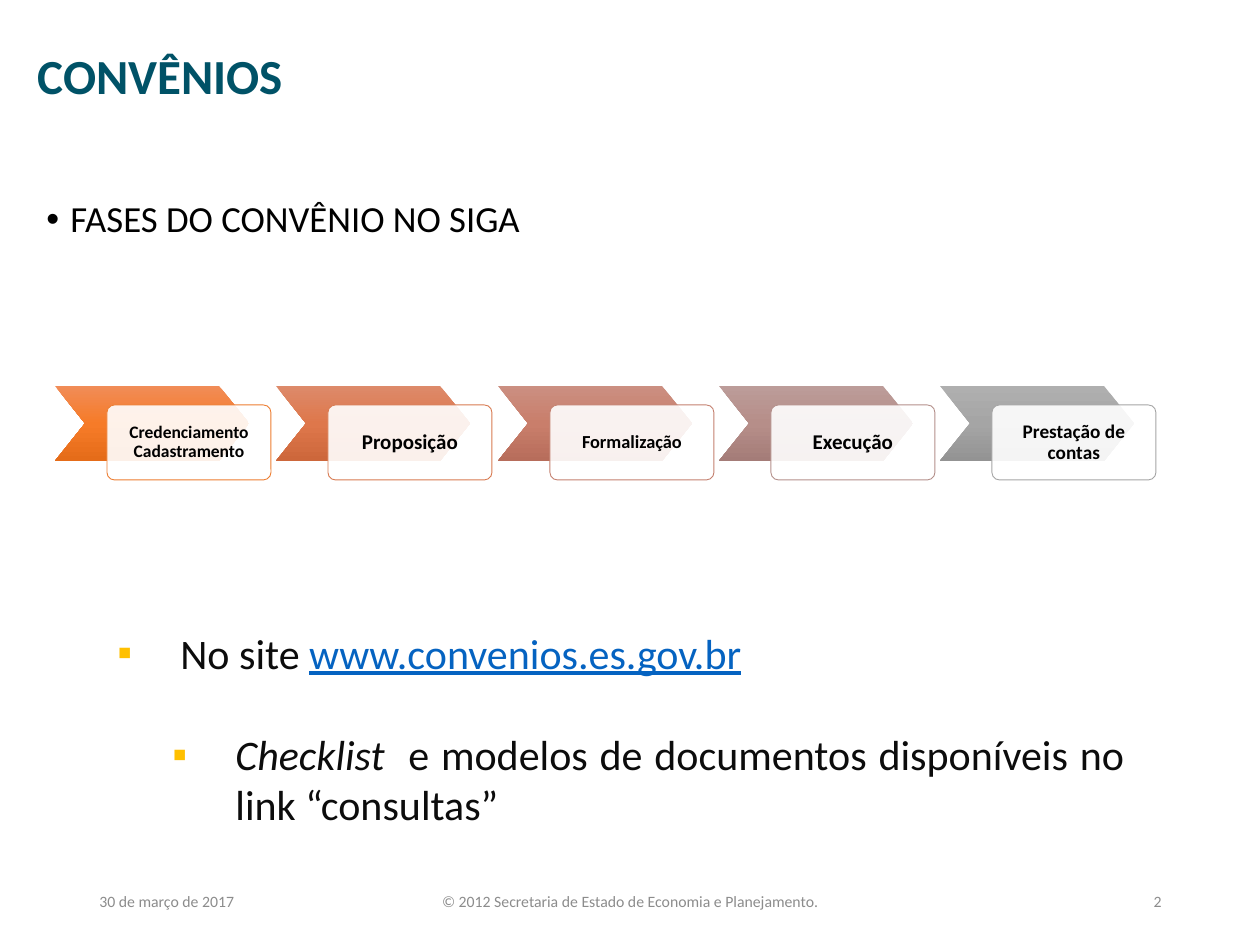
from dataclasses import dataclass

from lxml.etree import SubElement
from pptx import Presentation
from pptx.dml.color import RGBColor
from pptx.enum.shapes import MSO_SHAPE as Shape
from pptx.enum.text import MSO_ANCHOR as Anchor, MSO_AUTO_SIZE as AutoSize, PP_ALIGN as Align
from pptx.oxml.ns import qn
from pptx.util import Emu, Pt

PX = 914400 / 126
FONT = "Calibri"
COLORS = {
    "title": "005267",
    "black": "000000",
    "white": "FFFFFF",
    "text": "0C0C0C",
    "link": "0563C1",
    "bullet": "FFC000",
    "footer": "8C8C8C",
}


@dataclass
class Phase:
    label: str
    size: float
    gradient: tuple[str, str, str]
    outline: str


@dataclass
class Footer:
    text: str
    left: int
    width: int
    align: Align


PHASES = [
    Phase("Credenciamento Cadastramento", 10, ("F18C57", "F67B28", "E56C19"), "ED7D31"),
    Phase("Proposição", 12, ("DD8A6A", "DE774B", "CD673B"), "D87A51"),
    Phase("Formalização", 10.5, ("CB8F81", "C97E6B", "B76D5B"), "C48170"),
    Phase("Execução", 12, ("BC9C99", "B68E89", "A47C78"), "B4908B"),
    Phase("Prestação de contas", 11, ("AFAFAF", "A5A5A5", "939393"), "A5A5A5"),
]
FOOTERS = [
    Footer("30 de março de 2017", 87, 284, Align.LEFT),
    Footer("© 2012 Secretaria de Estado de Economia e Planejamento.", 417, 426, Align.CENTER),
    Footer("2", 890, 284, Align.RIGHT),
]
FIRST_LEFT, LAST_LEFT = 55, 940
CHEVRON_TOP, CHEVRON_WIDTH = 386, 194
CARD_SHIFT_X, CARD_SHIFT_Y, CARD_WIDTH = 52, 19, 164
PHASE_HEIGHT, CARD_INSET = 75, 12


def px(value: int) -> Emu:
    return Emu(round(value * PX))


def box(left: int, top: int, width: int, height: int) -> tuple[Emu, Emu, Emu, Emu]:
    return px(left), px(top), px(width), px(height)


def style_run(run, size: float, color: str, **flags: bool) -> None:
    font = run.font
    font.name, font.size = FONT, Pt(size)
    font.color.rgb = RGBColor.from_string(color)
    for name, value in flags.items():
        setattr(font, name, value)


def add_run(paragraph, text: str, size: float, color: str, **flags: bool) -> None:
    run = paragraph.add_run()
    run.text = text
    style_run(run, size, color, **flags)


def add_text_frame(slide, left: int, top: int, width: int, height: int):
    frame = slide.shapes.add_textbox(*box(left, top, width, height)).text_frame
    frame.word_wrap = True
    return frame


def set_bullet(paragraph, char: str, margin: int, hanging: int, color: str) -> None:
    properties = paragraph._p.get_or_add_pPr()
    properties.set("marL", str(px(margin)))
    properties.set("indent", str(-px(hanging)))
    SubElement(SubElement(properties, qn("a:buClr")), qn("a:srgbClr"), val=color)
    SubElement(properties, qn("a:buFont"), typeface="Arial")
    SubElement(properties, qn("a:buChar"), char=char)


def set_gradient(shape, colors: tuple[str, str, str]) -> None:
    """Fill from top to bottom with evenly spaced colours."""
    shape.fill.gradient()
    shape.fill.gradient_angle = 270
    stops = shape._element.spPr.find(".//" + qn("a:gsLst"))
    stops.clear()
    for index, color in enumerate(colors):
        position = index * 100000 // (len(colors) - 1)
        stop = SubElement(stops, qn("a:gs"), pos=str(position))
        SubElement(stop, qn("a:srgbClr"), val=color)


def add_phase(slide, phase: Phase, left: int) -> None:
    chevron = slide.shapes.add_shape(
        Shape.CHEVRON, *box(left, CHEVRON_TOP, CHEVRON_WIDTH, PHASE_HEIGHT))
    chevron.adjustments[0] = 0.4
    chevron.shadow.inherit = False
    chevron.line.fill.background()
    set_gradient(chevron, phase.gradient)

    card = slide.shapes.add_shape(
        Shape.ROUNDED_RECTANGLE,
        *box(left + CARD_SHIFT_X, CHEVRON_TOP + CARD_SHIFT_Y, CARD_WIDTH, PHASE_HEIGHT))
    card.adjustments[0] = 0.1
    card.shadow.inherit = False
    card.fill.solid()
    card.fill.fore_color.rgb = RGBColor.from_string(COLORS["white"])
    fill_color = card._element.spPr.find(qn("a:solidFill")).find(qn("a:srgbClr"))
    SubElement(fill_color, qn("a:alpha"), val="90000")
    card.line.color.rgb = RGBColor.from_string(phase.outline)
    card.line.width = Pt(0.5)

    frame = card.text_frame
    frame.word_wrap = True
    frame.vertical_anchor = Anchor.MIDDLE
    for side in ("left", "top", "right", "bottom"):
        setattr(frame, f"margin_{side}", px(CARD_INSET))
    paragraph = frame.paragraphs[0]
    paragraph.alignment = Align.CENTER
    paragraph.line_spacing = 0.9
    add_run(paragraph, phase.label, phase.size, COLORS["black"], bold=True)


def add_title(slide) -> None:
    title = slide.shapes.title
    title.left, title.top, title.width, title.height = box(25, 6, 1191, 137)
    frame = title.text_frame
    frame.text = "CONVÊNIOS"
    frame.vertical_anchor = Anchor.MIDDLE
    frame.paragraphs[0].alignment = Align.LEFT
    style_run(frame.paragraphs[0].runs[0], 28, COLORS["title"], bold=True)


def add_heading(slide) -> None:
    paragraph = add_text_frame(slide, 34, 195, 1191, 50).paragraphs[0]
    paragraph.line_spacing = 0.9
    paragraph.space_before = Pt(7.5)
    add_run(paragraph, "FASES DO CONVÊNIO NO SIGA", 21, COLORS["black"])
    set_bullet(paragraph, "•", 24, 24, COLORS["black"])


def add_site_notes(slide) -> None:
    frame = add_text_frame(slide, 105, 621, 1032, 254)
    frame.auto_size = AutoSize.SHAPE_TO_FIT_TEXT
    site = frame.paragraphs[0]
    add_run(site, "No site ", 24, COLORS["text"])
    add_run(site, "www.convenios.es.gov.br", 24, COLORS["link"], underline=True)
    set_bullet(site, "▪", 63, 63, COLORS["bullet"])

    checklist = frame.add_paragraph()
    checklist.level = 1
    checklist.alignment = Align.JUSTIFY
    checklist.space_before = Pt(29)
    add_run(checklist, "Checklist", 24, COLORS["text"], italic=True)
    add_run(checklist, "  e modelos de documentos disponíveis no link “consultas”",
            24, COLORS["text"])
    set_bullet(checklist, "▪", 118, 63, COLORS["bullet"])


def add_footer(slide, footer: Footer) -> None:
    frame = add_text_frame(slide, footer.left, 876, footer.width, 50)
    frame.vertical_anchor = Anchor.MIDDLE
    paragraph = frame.paragraphs[0]
    paragraph.alignment = footer.align
    add_run(paragraph, footer.text, 9, COLORS["footer"])


def main() -> None:
    presentation = Presentation()
    presentation.slide_width, presentation.slide_height = px(1260), px(945)
    slide = presentation.slides.add_slide(presentation.slide_layouts.get_by_name("Title Only"))
    add_title(slide)
    add_heading(slide)
    pitch = (LAST_LEFT - FIRST_LEFT) / (len(PHASES) - 1)
    for index, phase in enumerate(PHASES):
        add_phase(slide, phase, round(FIRST_LEFT + index * pitch))
    add_site_notes(slide)
    for footer in FOOTERS:
        add_footer(slide, footer)
    presentation.save("out.pptx")


if __name__ == "__main__":
    main()
